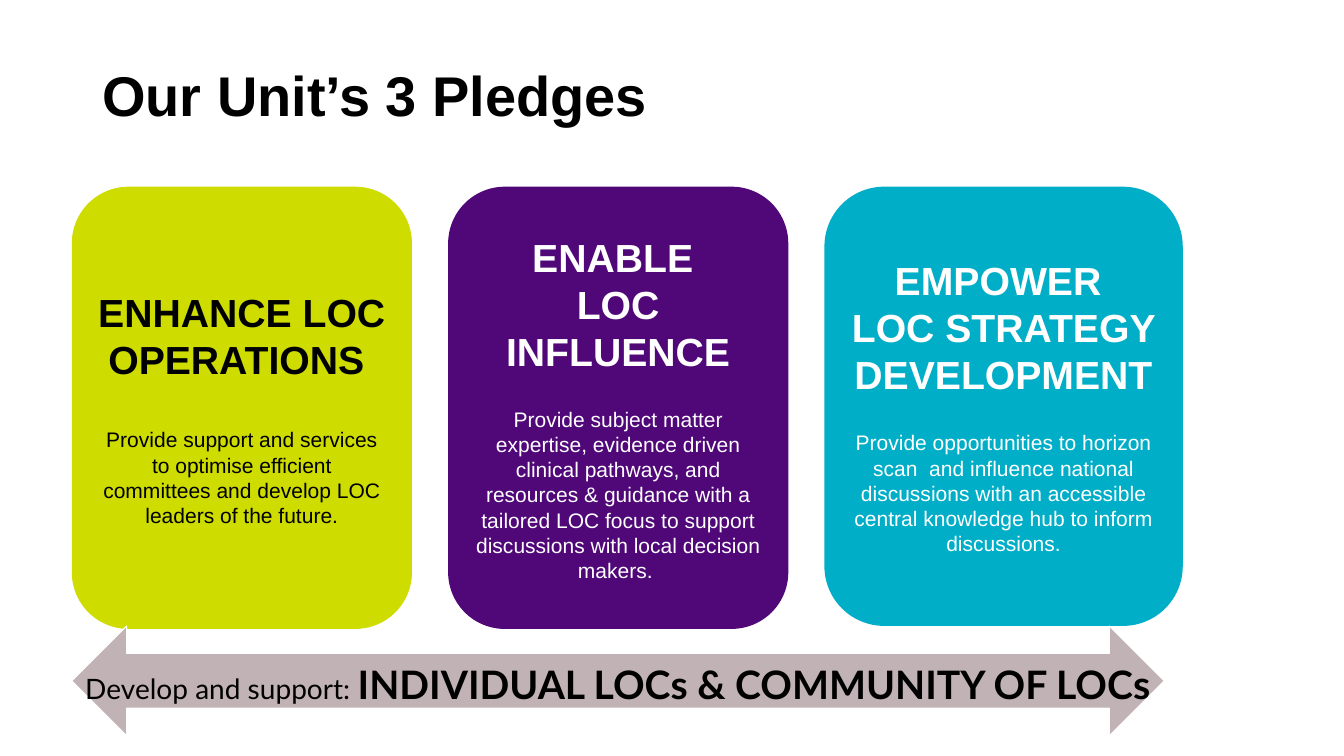
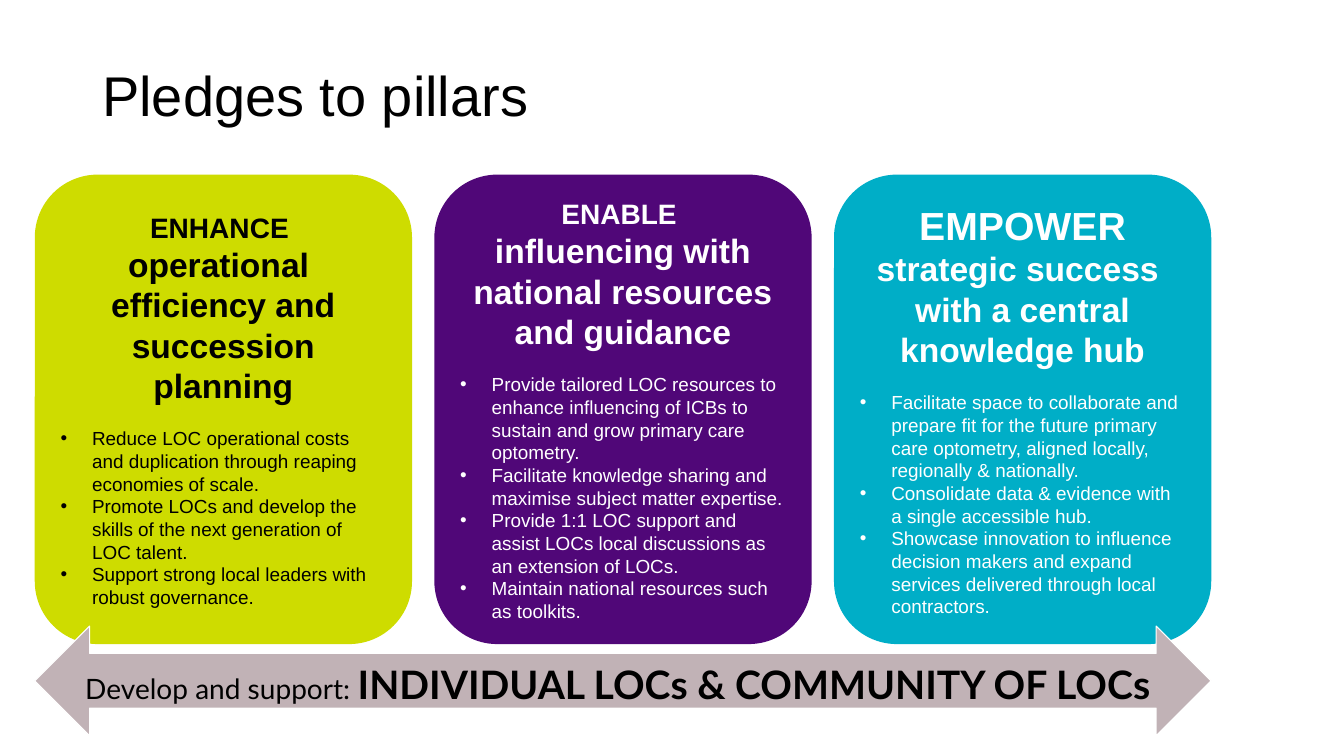
from pptx import Presentation
from pptx.dml.color import RGBColor
from pptx.enum.shapes import MSO_SHAPE
from pptx.enum.text import MSO_ANCHOR, PP_ALIGN
from pptx.oxml.ns import qn
from pptx.util import Pt
from lxml import etree

ROUNDED = MSO_SHAPE.ROUNDED_RECTANGLE
DOUBLE_ARROW = MSO_SHAPE.LEFT_RIGHT_ARROW
MIDDLE = MSO_ANCHOR.MIDDLE
LEFT, CENTER = PP_ALIGN.LEFT, PP_ALIGN.CENTER

BLACK = RGBColor(0x00, 0x00, 0x00)
WHITE = RGBColor(0xFF, 0xFF, 0xFF)
LIME = RGBColor(0xCE, 0xDC, 0x00)
PURPLE = RGBColor(0x50, 0x07, 0x78)
TEAL = RGBColor(0x00, 0xAE, 0xC7)
MAUVE = RGBColor(0xC1, 0xB2, 0xB6)
CARD_COLORS = [(LIME, BLACK), (PURPLE, WHITE), (TEAL, WHITE)]

HEADING_FONT, BANNER_FONT = "Arial", "Lato"
LARGE, MEDIUM, SMALL = 37.3, 32, 26.7
LINE_HEIGHT = 1.15
BULLET_INDENT = 30

TITLE_BOX = (87.8, 28.1, 796.3, 130.3)
BANNER_TEXT_BOX = (68.4, 622.1, 1040.4, 54)
BANNER_TOP, BANNER_HEIGHT = 596.2, 104.4

# Each card: heading paragraphs as lists of (text, size), gap before the body, body
PLEDGES = [
    ([[("ENHANCE LOC OPERATIONS ", LARGE)]], LARGE,
     "Provide support and services to optimise efficient committees and "
     "develop LOC leaders of the future."),
    ([[("ENABLE ", LARGE)], [("LOC INFLUENCE", LARGE)]], SMALL,
     "Provide subject matter expertise, evidence driven clinical pathways, and "
     "resources & guidance with a tailored LOC focus to support discussions "
     "with local decision makers. "),
    ([[("EMPOWER ", LARGE)], [("LOC STRATEGY DEVELOPMENT", LARGE)]], SMALL,
     "Provide opportunities to horizon scan  and influence national discussions "
     "with an accessible central knowledge hub to inform discussions."),
]
PILLARS = [
    ([[("ENHANCE ", SMALL)], [("operational ", MEDIUM)],
      [("efficiency and succession planning", MEDIUM)]], 18,
     ["Reduce LOC operational costs and duplication through reaping economies of scale.",
      "Promote LOCs and develop the skills of the next generation of LOC talent.",
      "Support strong local leaders with robust governance."]),
    ([[("ENABLE ", SMALL)],
      [("influencing with national resources and guidance", MEDIUM)]], 18,
     ["Provide tailored LOC resources to enhance influencing of ICBs to sustain "
      "and grow primary care optometry.",
      "Facilitate knowledge sharing and maximise subject matter expertise.",
      "Provide 1:1 LOC support and assist LOCs local discussions as an extension of LOCs.",
      "Maintain national resources such as toolkits."]),
    ([[("EMPOWER ", LARGE), ("strategic success ", MEDIUM)],
      [("with a central knowledge hub", MEDIUM)]], 18,
     ["Facilitate space to collaborate and prepare fit for the future primary care "
      "optometry, aligned locally, regionally & nationally.",
      "Consolidate data & evidence with a single accessible hub.",
      "Showcase innovation to influence decision makers and expand services "
      "delivered through local contractors."]),
]


def points(box):
    return [Pt(length) for length in box]


def add_text(paragraph, text, size, color=BLACK, font=HEADING_FONT, bold=False):
    run = paragraph.add_run()
    run.text = text
    run.font.size = Pt(size)
    run.font.name = font
    run.font.bold = bold
    run.font.color.rgb = color


def next_paragraph(frame, align=LEFT, before=0):
    """Return the unused first paragraph of the frame, or a new one."""
    paragraph = frame.paragraphs[0]
    if paragraph.runs:
        paragraph = frame.add_paragraph()
    paragraph.alignment = align
    if before:
        paragraph.space_before = Pt(before)
    return paragraph


def add_bullet(paragraph):
    properties = paragraph._p.get_or_add_pPr()
    properties.set("marL", str(Pt(BULLET_INDENT)))
    properties.set("indent", str(-Pt(BULLET_INDENT)))
    etree.SubElement(properties, qn("a:buFont")).set("typeface", "Arial")
    etree.SubElement(properties, qn("a:buChar")).set("char", "•")


def add_filled_shape(slide, kind, box, color):
    shape = slide.shapes.add_shape(kind, *points(box))
    shape.shadow.inherit = False
    shape.fill.solid()
    shape.fill.fore_color.rgb = color
    shape.line.fill.background()
    return shape


def add_text_frame(slide, box):
    frame = slide.shapes.add_textbox(*points(box)).text_frame
    frame.word_wrap = True
    return frame


def add_title(slide, text, bold):
    frame = add_text_frame(slide, TITLE_BOX)
    frame.vertical_anchor = MIDDLE
    frame.margin_left = frame.margin_right = Pt(9.6)
    frame.margin_top = frame.margin_bottom = Pt(4.8)
    paragraph = next_paragraph(frame)
    paragraph.line_spacing = 0.9
    add_text(paragraph, text, 53.3, bold=bold)


def add_card(slide, box, card, colors):
    """Draw a rounded card; a list as body becomes bullets, a string centred text."""
    heading, gap, body = card
    fill, ink = colors
    frame = add_filled_shape(slide, ROUNDED, box, fill).text_frame
    frame.word_wrap = True
    frame.vertical_anchor = MIDDLE
    for runs in heading:
        paragraph = next_paragraph(frame, CENTER)
        for text, size in runs:
            add_text(paragraph, text, size, ink, bold=True)

    before = gap * LINE_HEIGHT
    if isinstance(body, str):
        add_text(next_paragraph(frame, CENTER, before), body, 20, ink)
        return
    for index, text in enumerate(body):
        paragraph = next_paragraph(frame, LEFT, 0 if index else before)
        add_bullet(paragraph)
        add_text(paragraph, text, 18, ink)


def add_card_row(slide, left, top, sizes, gap, cards):
    for (width, height), card, colors in zip(sizes, cards, CARD_COLORS):
        add_card(slide, (left, top, width, height), card, colors)
        left += width + gap


def add_banner(slide, left, width):
    arrow = add_filled_shape(slide, DOUBLE_ARROW,
                             (left, BANNER_TOP, width, BANNER_HEIGHT), MAUVE)
    arrow.line.color.rgb = WHITE
    arrow.line.width = Pt(1)
    paragraph = next_paragraph(add_text_frame(slide, BANNER_TEXT_BOX), CENTER)
    paragraph.line_spacing = 1.07
    paragraph.space_after = Pt(10.7)
    add_text(paragraph, "Develop and support: ", SMALL, font=BANNER_FONT)
    add_text(paragraph, "INDIVIDUAL LOCs & COMMUNITY OF LOCs", LARGE,
             font=BANNER_FONT, bold=True)


def add_pledges_slide(slide):
    add_title(slide, "Our Unit’s 3 Pledges", bold=True)
    sizes = [(324, 421.2), (324, 421.2), (341.3, 418.3)]
    add_card_row(slide, 68.4, 177.8, sizes, 34.4, PLEDGES)
    add_banner(slide, 68.4, 1040.4)


def add_pillars_slide(slide):
    add_title(slide, "Pledges to pillars", bold=False)
    add_card_row(slide, 33.1, 166.3, [(359.3, 447.1)] * 3, 21.3, PILLARS)
    add_banner(slide, 33.1, 1120.3)


def main():
    presentation = Presentation()
    presentation.slide_width = Pt(1280)
    presentation.slide_height = Pt(720)
    blank = presentation.slide_layouts[6]
    for build in (add_pledges_slide, add_pillars_slide):
        build(presentation.slides.add_slide(blank))
    presentation.save("out.pptx")


if __name__ == "__main__":
    main()
